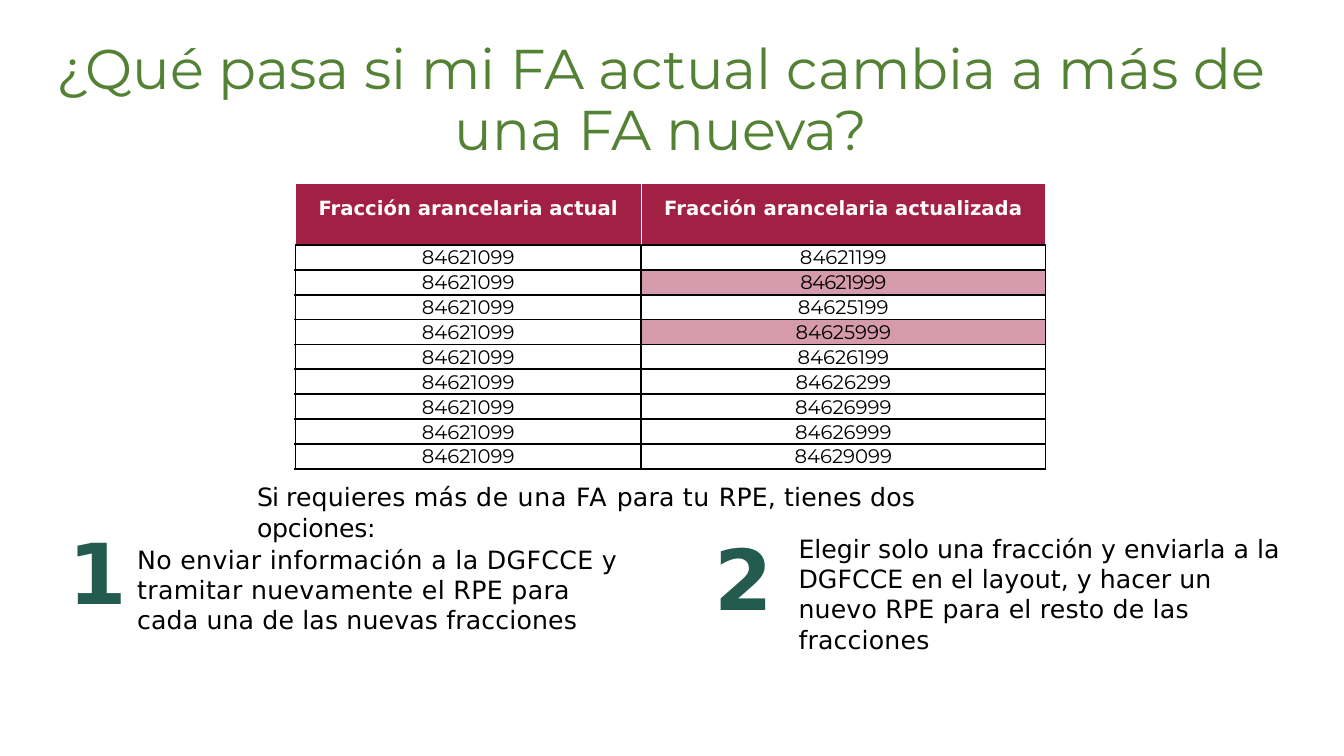
from pptx import Presentation
from pptx.dml.color import RGBColor
from pptx.enum.text import MSO_ANCHOR as ANCHOR, MSO_AUTO_SIZE as AUTOSIZE, PP_ALIGN as ALIGN
from pptx.oxml import parse_xml
from pptx.oxml.ns import nsdecls
from pptx.util import Inches, Pt

GREEN = RGBColor(0x54, 0x82, 0x35)
TEAL = RGBColor(0x23, 0x5C, 0x4F)
WINE = RGBColor(0xA3, 0x20, 0x45)
PINK = RGBColor(0xD5, 0x9A, 0xAB)
WHITE = RGBColor(0xFF, 0xFF, 0xFF)
BLACK = RGBColor(0, 0, 0)
SANS, MONTSERRAT = "DejaVu Sans", "Montserrat"


def add_run(p, text, font, size, color, bold=False, spacing=0):
    r = p.add_run()
    r.text = text
    r.font.name, r.font.size, r.font.bold = font, Pt(size), bold
    r.font.color.rgb = color
    if spacing:
        r.font._element.set("spc", str(round(spacing * 100)))


def set_frame(tf, top):
    tf.word_wrap = True
    tf.auto_size = AUTOSIZE.NONE
    tf.vertical_anchor = ANCHOR.TOP
    tf.margin_left = tf.margin_right = tf.margin_bottom = 0
    tf.margin_top = Inches(top)


prs = Presentation()
prs.slide_width, prs.slide_height = Inches(13.33), Inches(7.5)
s = prs.slides.add_slide(prs.slide_layouts[5])

# Title
title = s.shapes.title
title.left, title.top = Inches(0.42), Inches(0.33)
title.width, title.height = Inches(12.27), Inches(1.29)
set_frame(title.text_frame, 0.08)
p = title.text_frame.paragraphs[0]
p.alignment, p.line_spacing = ALIGN.CENTER, 0.9
add_run(p, "¿Qué pasa si mi FA actual cambia a más de una FA nueva?", MONTSERRAT, 40, GREEN)

# Table of current and updated tariff codes
CURRENT = "84621099"
UPDATED = ["84621199", "84621999", "84625199", "84625999", "84626199",
           "84626299", "84626999", "84626999", "84629099"]
CHANGED = {"84621999", "84625999"}
rows = [("Fracción arancelaria actual", "Fracción arancelaria actualizada")]
rows += [(CURRENT, code) for code in UPDATED]

table = s.shapes.add_table(len(rows), 2, Inches(2.93), Inches(1.82),
                           Inches(7.44), Inches(2.68)).table
table.first_row = table.horz_banding = False
table.columns[0].width, table.columns[1].width = Inches(3.43), Inches(4.01)
for i, row in enumerate(rows):
    header = i == 0
    table.rows[i].height = Inches(0.61 if header else 0.23)
    for j, text in enumerate(row):
        cell = table.cell(i, j)
        side = 0 if header else 0.01
        cell.margin_left = cell.margin_right = Inches(side)
        cell.margin_top, cell.margin_bottom = Inches(0.14 if header else 0.01), 0
        cell.vertical_anchor = ANCHOR.TOP if header else ANCHOR.BOTTOM
        if header or text in CHANGED:
            cell.fill.solid()
            cell.fill.fore_color.rgb = WINE if header else PINK
        else:
            cell.fill.background()
        p = cell.text_frame.paragraphs[0]
        p.alignment = ALIGN.CENTER
        spacing = -0.6 if text == "84621999" else 0
        add_run(p, text, SANS if header else MONTSERRAT, 14,
                WHITE if header else BLACK, header, spacing)
        # Cell borders
        for k, edge in enumerate(("lnL", "lnR", "lnT", "lnB")):
            white = header and edge != "lnB"
            color, width = (WHITE, Pt(1)) if white else (BLACK, Pt(1.5))
            cell._tc.get_or_add_tcPr().insert(k, parse_xml(
                f'<a:{edge} {nsdecls("a")} w="{width}"><a:solidFill>'
                f'<a:srgbClr val="{color}"/></a:solidFill></a:{edge}>'))

# Introduction, options and their numbers: box, size, colour, bold, (text, spacing) runs
texts = [
    ((2.55, 4.77, 7.64, 0.33), 18, BLACK, False,
     [("Si ", -0.7), ("requieres ", 0.1), ("más ", 0.2), ("de una ", 0.5), ("FA ", 0.8),
      ("para ", 0.1), ("tu ", 0.5), ("RPE, tienes dos ", 0.1), ("opciones:", -0.2)]),
    ((0.68, 5.15, 0.35, 1.03), 60, TEAL, True, [("1", 0)]),
    ((1.36, 5.39, 4.91, 0.93), 18, BLACK, False,
     [("No enviar información a la DGFCCE y ", 0.25),
      ("tramitar nuevamente el RPE para ", 0.25),
      ("cada una de las nuevas fracciones", 0.1)]),
    ((7.09, 5.21, 0.52, 1.03), 60, TEAL, True, [("2", 0)]),
    ((7.92, 5.28, 4.9, 0.93), 18, BLACK, False,
     [("Elegir solo una fracción y enviarla a la ", 0),
      ("DGFCCE en el layout, y hacer un ", 0.05),
      ("nuevo RPE para el resto de las fracciones", 0.15)]),
]
for box, size, color, bold, runs in texts:
    tf = s.shapes.add_textbox(*map(Inches, box)).text_frame
    set_frame(tf, 0.01)
    for text, spacing in runs:
        add_run(tf.paragraphs[0], text, SANS, size, color, bold, spacing)

prs.save("out.pptx")
